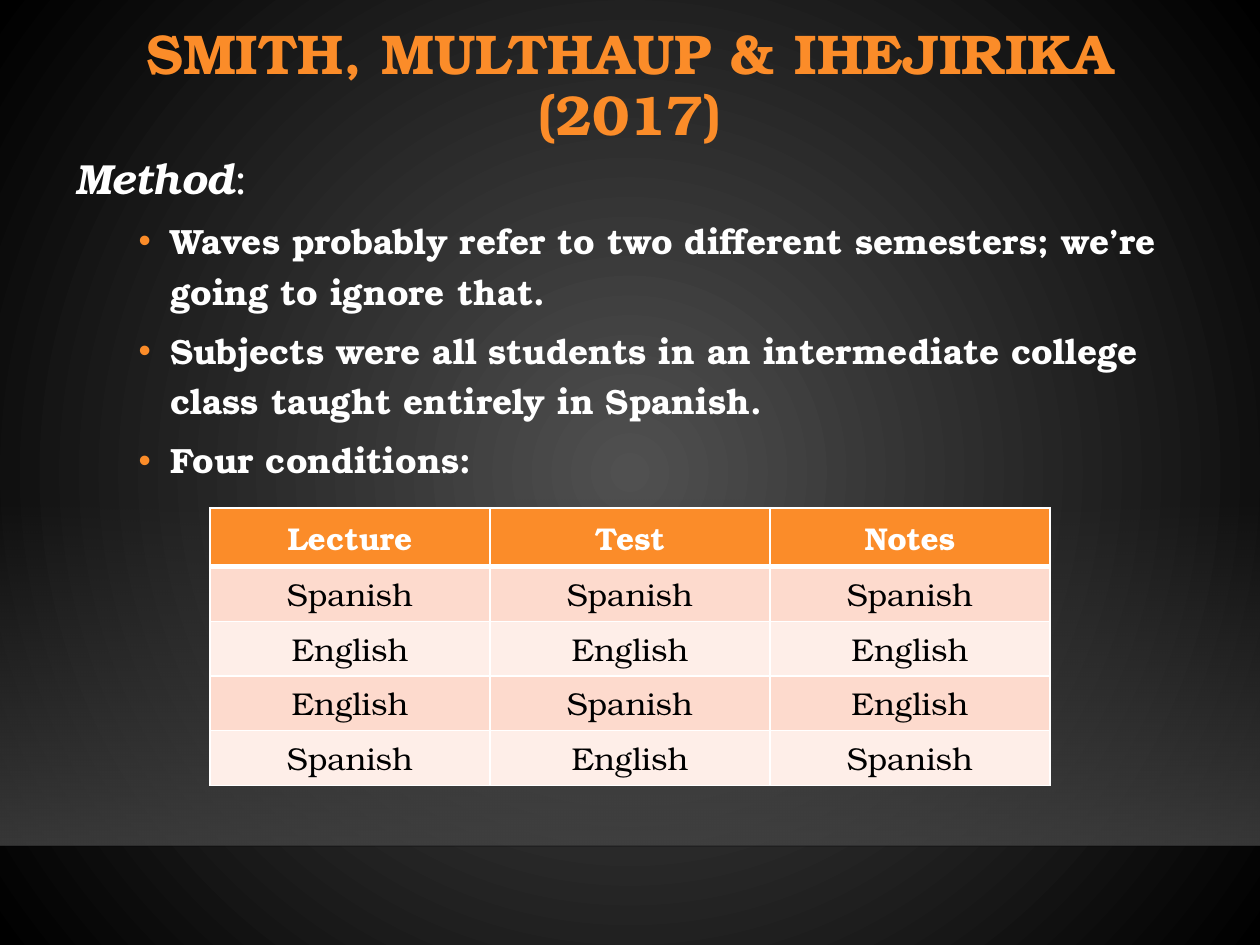
"""Build the method slide with its table of four conditions."""
from lxml.etree import SubElement
from pptx import Presentation
from pptx.dml.color import RGBColor
from pptx.enum.shapes import MSO_CONNECTOR, MSO_SHAPE
from pptx.enum.text import MSO_ANCHOR, MSO_AUTO_SIZE, PP_ALIGN
from pptx.oxml import parse_xml
from pptx.oxml.ns import nsdecls, qn
from pptx.util import Emu, Pt

FONT = "TeX Gyre Bonum"
ORANGE = "FB8C29"
WHITE = "FFFFFF"


def px(*values):
    return [Emu(round(v * 914400 / 126)) for v in values]


def color(value):
    return RGBColor.from_string(value)


prs = Presentation()
prs.slide_width, prs.slide_height = px(1260, 945)
s = prs.slides.add_slide(prs.slide_layouts[1])

fill = s.background.fill
fill.gradient()
for stop, value in zip(fill.gradient_stops, ("505050", "000000")):
    stop.color.rgb = color(value)
lin = s.element.find(".//" + qn("a:lin"))
lin.getparent().replace(lin, parse_xml(
    f'<a:path {nsdecls("a")} path="circle">'
    '<a:fillToRect l="50000" t="50000" r="50000" b="50000"/></a:path>'))

title, body = s.placeholders
title.left, title.top, title.width, title.height = px(63, 38, 1134, 98)
body.left, body.top, body.width, body.height = px(63, 136, 1134, 781)

sp = s.shapes.add_shape(MSO_SHAPE.RECTANGLE, *px(0, 499, 1260, 347))
sp.shadow.inherit = False
sp.line.fill.background()
sp.fill.gradient()
sp.fill.gradient_angle = 270
for stop in sp.fill.gradient_stops:
    stop.color.rgb = color("454545")
for clr, alpha in zip(sp.element.spPr.iter(qn("a:srgbClr")), (0, 80000)):
    SubElement(clr, qn("a:alpha"), val=str(alpha))

line = s.shapes.add_connector(MSO_CONNECTOR.STRAIGHT, *px(0, 846, 1260, 846))
line.line.width = Pt(1)
line.line.color.rgb = color("000001")
clr = line.element.spPr.find(".//" + qn("a:srgbClr"))
SubElement(clr, qn("a:alpha"), val="20000")
SubElement(line.element.spPr, qn("a:effectLst"))

for shape in (line, sp):
    s.shapes.element.insert(2, shape.element)

tf = title.text_frame
tf.text = "SMITH, MULTHAUP & IHEJIRIKA (2017)"
tf.word_wrap = True
tf.auto_size = MSO_AUTO_SIZE.NONE
tf.vertical_anchor = MSO_ANCHOR.MIDDLE
p = tf.paragraphs[0]
p.alignment = PP_ALIGN.CENTER
p.line_spacing = 0.9
r = p.runs[0]
r.font.name, r.font.size, r.font.bold = FONT, Pt(32), True
r.font.color.rgb = color(ORANGE)

tf = body.text_frame
tf.text = "Method"
tf.word_wrap = True
tf.auto_size = MSO_AUTO_SIZE.NONE
p = tf.paragraphs[0]
p.add_run().text = ":"
pPr = p._p.get_or_add_pPr()
pPr.set("marL", "0")
pPr.set("indent", "0")
SubElement(pPr, qn("a:buNone"))
p.line_spacing = 1.2
p.space_before = Pt(0)
for r, strong in zip(p.runs, (True, False)):
    r.font.name, r.font.size = FONT, Pt(24)
    r.font.bold = r.font.italic = strong
    r.font.color.rgb = color(WHITE)

for text in (
    "Waves probably refer to two different semesters; we’re going to ignore that.",
    "Subjects were all students in an intermediate college class taught entirely in Spanish.",
    "Four conditions:",
):
    p = tf.add_paragraph()
    p.text = text
    p.level = 1
    pPr = p._p.get_or_add_pPr()
    pPr.set("marL", "685800")
    pPr.set("indent", "-228600")
    SubElement(SubElement(pPr, qn("a:buClr")), qn("a:srgbClr"), val=ORANGE)
    SubElement(pPr, qn("a:buChar"), char="•")
    p.line_spacing = 1.2
    p.space_before = Pt(5)
    r = p.runs[0]
    r.font.name, r.font.size, r.font.bold = FONT, Pt(20), True
    r.font.color.rgb = color(WHITE)

rows = [
    ("Lecture", "Test", "Notes"),
    ("Spanish", "Spanish", "Spanish"),
    ("English", "English", "English"),
    ("English", "Spanish", "English"),
    ("Spanish", "English", "Spanish"),
]
table = s.shapes.add_table(len(rows), 3, *px(210, 508, 840, 255)).table
for i, row in enumerate(rows):
    header = i == 0
    band = ORANGE if header else ("FEEEE8", "FDDACD")[i % 2]
    widths = {"L": 1, "R": 1, "T": 3 if i == 1 else 1, "B": 3 if header else 1}
    for j, text in enumerate(row):
        cell = table.cell(i, j)
        cell.text = text
        tcPr = cell._tc.get_or_add_tcPr()
        for side, width in widths.items():
            ln = SubElement(tcPr, qn("a:ln" + side), w=str(Pt(width)))
            SubElement(SubElement(ln, qn("a:solidFill")), qn("a:srgbClr"), val=WHITE)
        cell.fill.solid()
        cell.fill.fore_color.rgb = color(band)
        p = cell.text_frame.paragraphs[0]
        p.alignment = PP_ALIGN.CENTER
        r = p.runs[0]
        r.font.name, r.font.size, r.font.bold = FONT, Pt(18), header
        r.font.color.rgb = color(WHITE if header else "000000")

prs.save("out.pptx")
